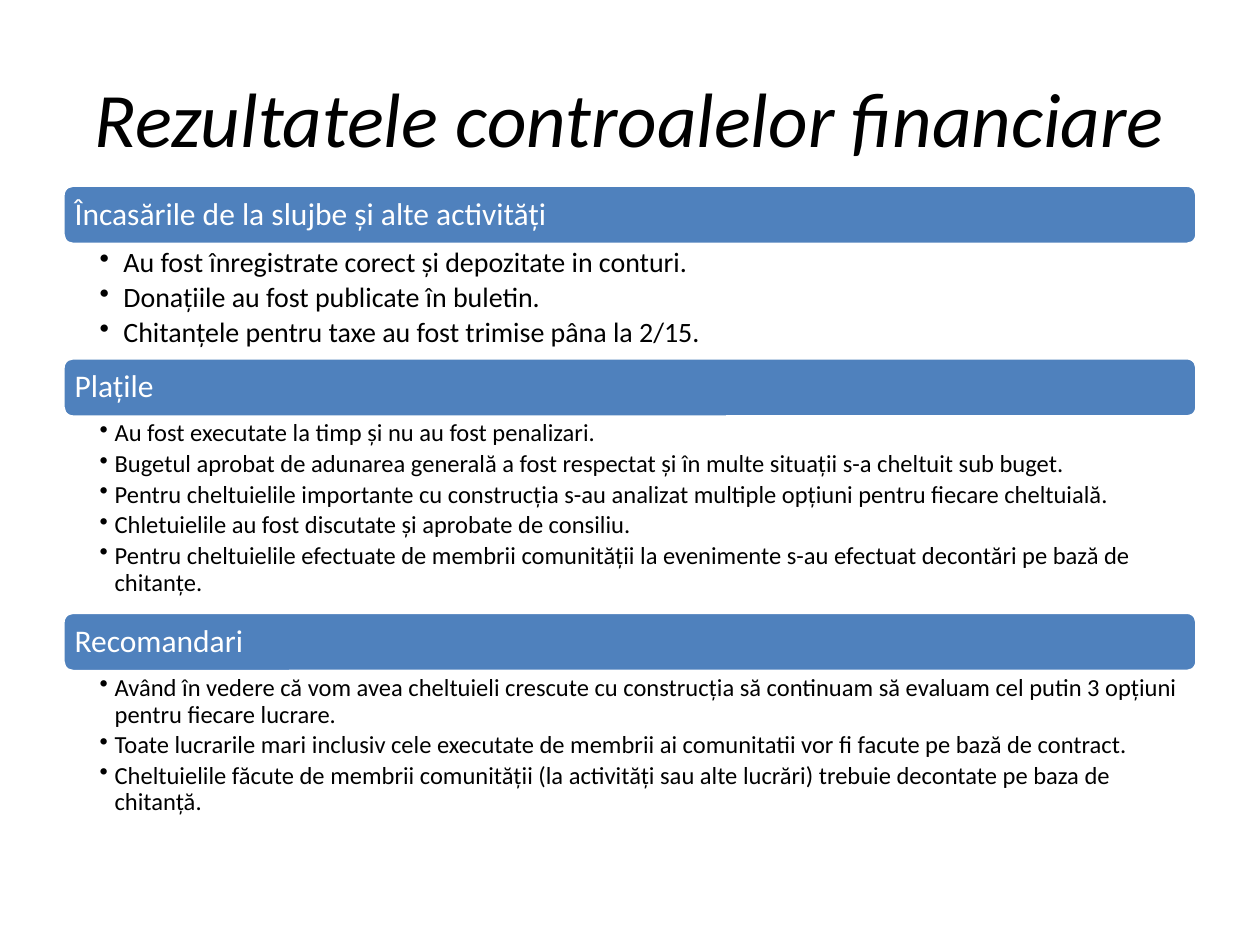
from lxml.etree import SubElement
from pptx import Presentation
from pptx.dml.color import RGBColor
from pptx.enum.shapes import MSO_SHAPE as Shape
from pptx.enum.text import MSO_ANCHOR as Anchor, PP_ALIGN as Align
from pptx.oxml.ns import qn
from pptx.util import Inches, Pt

COLORS = {"bar": "4F81BD", "white": "FFFFFF", "black": "000000"}
FONT = "Calibri"
LEFT, WIDTH = 0.5, 9
BAR_HEIGHT = 0.47

# Each section: heading, top, list height, list text size, bullet indent, items
SECTIONS = [
    ("Încasările de la slujbe și alte activități", 1.47, 0.9, 16, 0.19, [
        "Au fost înregistrate corect și depozitate in conturi.",
        "Donațiile au fost publicate în buletin.",
        "Chitanțele pentru taxe au fost trimise pâna la 2/15.",
    ]),
    ("Plațile", 2.84, 1.55, 14, 0.12, [
        "Au fost executate la timp și nu au fost penalizari.",
        "Bugetul aprobat de adunarea generală a fost respectat și în multe "
        "situații s-a cheltuit sub buget.",
        "Pentru cheltuielile importante cu construcția s-au analizat multiple "
        "opțiuni pentru fiecare cheltuială.",
        "Chletuielile au fost discutate și aprobate de consiliu.",
        "Pentru cheltuielile efectuate de membrii comunității la evenimente "
        "s-au efectuat decontări pe bază de chitanțe.",
    ]),
    ("Recomandari", 4.86, 1.22, 14, 0.12, [
        "Având în vedere că vom avea cheltuieli crescute cu construcția să "
        "continuam să evaluam cel putin 3 opțiuni pentru fiecare lucrare.",
        "Toate lucrarile mari inclusiv cele executate de membrii ai "
        "comunitatii vor fi facute pe bază de contract.",
        "Cheltuielile făcute de membrii comunității (la activități sau alte "
        "lucrări) trebuie decontate pe baza de chitanță.",
    ]),
]


def color(name):
    return RGBColor.from_string(COLORS[name])


def add_run(paragraph, text, size, color_name, italic=None):
    run = paragraph.add_run()
    run.text = text
    run.font.name = FONT
    run.font.size = Pt(size)
    run.font.italic = italic
    run.font.color.rgb = color(color_name)


def set_margins(frame, left, right, vertical):
    frame.word_wrap = True
    frame.margin_left, frame.margin_right = Inches(left), Inches(right)
    frame.margin_top = frame.margin_bottom = Inches(vertical)


def set_bullet(paragraph, indent):
    properties = paragraph._p.get_or_add_pPr()
    properties.set("marL", str(Inches(indent)))
    properties.set("indent", str(-Inches(indent)))
    SubElement(properties, qn("a:buChar")).set("char", "•")


def add_title(slide, text):
    title = slide.shapes.title
    title.left, title.top = Inches(LEFT), Inches(0.3)
    title.width, title.height = Inches(WIDTH), Inches(1.25)
    title.text_frame.vertical_anchor = Anchor.MIDDLE
    paragraph = title.text_frame.paragraphs[0]
    paragraph.alignment = Align.CENTER
    add_run(paragraph, text, 44, "black", italic=True)


def add_heading_bar(slide, text, top):
    bar = slide.shapes.add_shape(Shape.ROUNDED_RECTANGLE, Inches(LEFT), Inches(top),
                                 Inches(WIDTH), Inches(BAR_HEIGHT))
    bar.shadow.inherit = False
    bar.fill.solid()
    bar.fill.fore_color.rgb = color("bar")
    bar.line.color.rgb = color("white")
    bar.line.width = Pt(2)
    set_margins(bar.text_frame, 0.07, 0.07, 0.07)
    bar.text_frame.vertical_anchor = Anchor.MIDDLE
    paragraph = bar.text_frame.paragraphs[0]
    paragraph.alignment = Align.LEFT
    paragraph.line_spacing = 0.9
    add_run(paragraph, text, 18, "white")


def add_bullet_list(slide, items, top, height, size, indent):
    box = slide.shapes.add_textbox(Inches(LEFT), Inches(top), Inches(WIDTH), Inches(height))
    frame = box.text_frame
    set_margins(frame, 0.29, 0.13, 0.03)
    for index, item in enumerate(items):
        paragraph = frame.add_paragraph() if index else frame.paragraphs[0]
        paragraph.level = 1
        paragraph.line_spacing = 0.9
        paragraph.space_after = Pt(size * 0.17)
        set_bullet(paragraph, indent)
        add_run(paragraph, item, size, "black")


def main():
    deck = Presentation()
    deck.slide_width, deck.slide_height = Inches(10), Inches(7.5)
    slide = deck.slides.add_slide(deck.slide_layouts[5])

    add_title(slide, "Rezultatele controalelor financiare")
    # Each heading bar sits directly above its list
    for heading, top, height, size, indent, items in SECTIONS:
        add_heading_bar(slide, heading, top)
        add_bullet_list(slide, items, top + BAR_HEIGHT, height, size, indent)

    deck.save("out.pptx")


if __name__ == "__main__":
    main()
